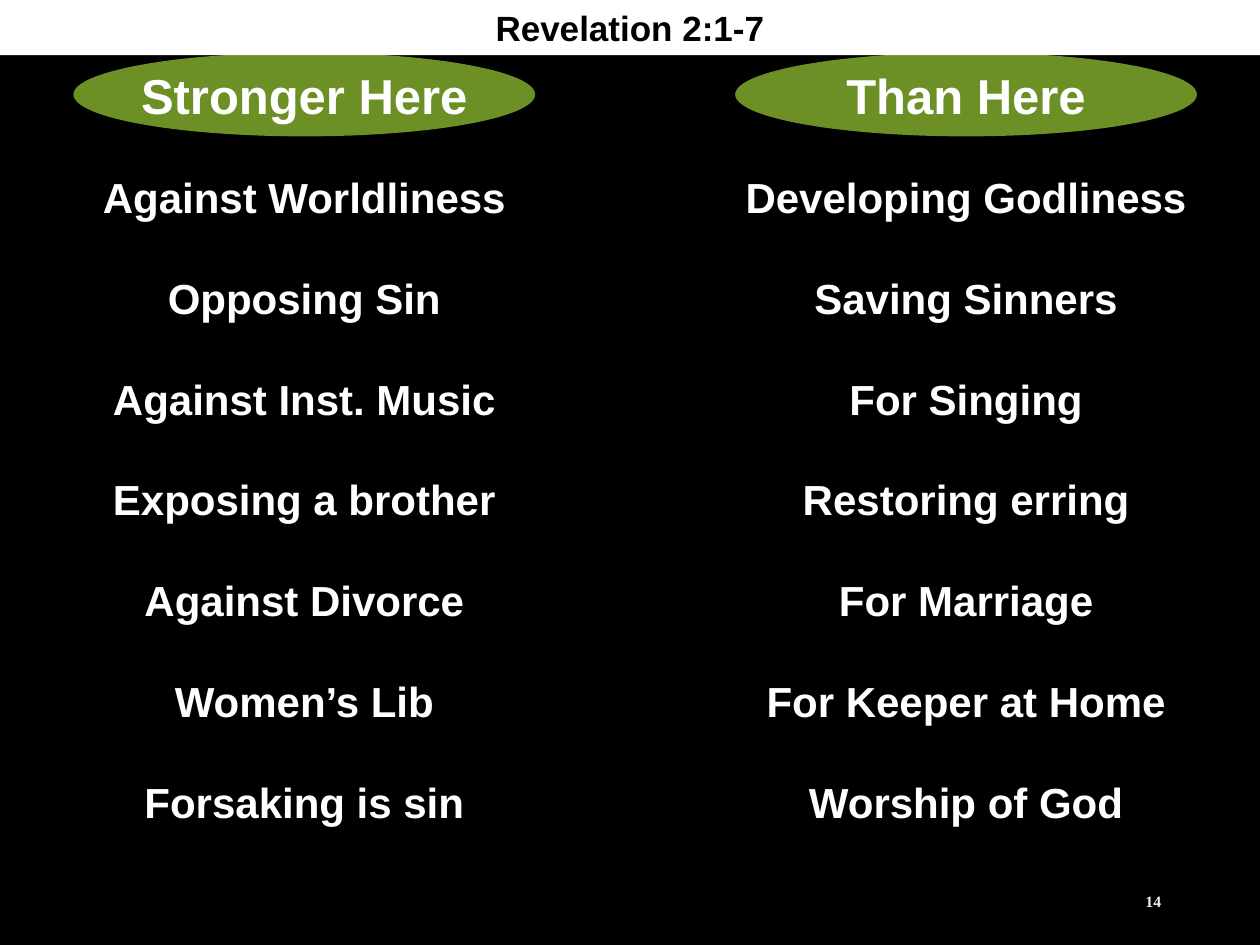
"""Build the slide that sets two lists side by side."""
import pptx
import pptx.dml.color
import pptx.enum.shapes
import pptx.enum.text
import pptx.oxml
import pptx.oxml.ns
import pptx.util

Cm = pptx.util.Cm
Pt = pptx.util.Pt
ALIGN = pptx.enum.text.PP_ALIGN
HUES = {"black": "000000", "white": "FFFFFF", "green": "6C9026", "pale": "EDEDED"}
WIDTH = 9.31
LISTS = [
    (1.48, "Stronger Here", [
        "Against Worldliness", "Opposing Sin", "Against Inst. Music",
        "Exposing a brother", "Against Divorce", "Women’s Lib",
        "Forsaking is sin"]),
    (14.82, "Than Here", [
        "Developing Godliness", "Saving Sinners", "For Singing",
        "Restoring erring", "For Marriage", "For Keeper at Home",
        "Worship of God"]),
]


def color(name):
    """Return the named colour."""
    return pptx.dml.color.RGBColor.from_string(HUES[name])


def place(shape, left, top, width, height):
    """Move and size a shape in centimetres."""
    shape.left, shape.top = Cm(left), Cm(top)
    shape.width, shape.height = Cm(width), Cm(height)


def paint(shape, name):
    """Fill a shape and hide its outline."""
    shape.fill.solid()
    shape.fill.fore_color.rgb = color(name)
    shape.line.fill.background()


def write(shape, lines, size, hue="white", face="Arial", align=ALIGN.CENTER,
          gap=0, wrap=False):
    """Write each line as a bold paragraph with no bullet."""
    frame = shape.text_frame
    frame.word_wrap = wrap
    frame.auto_size = pptx.enum.text.MSO_AUTO_SIZE.NONE
    frame.vertical_anchor = pptx.enum.text.MSO_ANCHOR.MIDDLE
    for i, line in enumerate(lines):
        para = frame.add_paragraph() if i else frame.paragraphs[0]
        props = para._p.get_or_add_pPr()
        props.set("marL", "0")
        props.set("indent", "0")
        props.append(pptx.oxml.parse_xml(
            "<a:buNone %s/>" % pptx.oxml.ns.nsdecls("a")))
        para.alignment = align
        para.space_before = Pt(gap if i else 0)
        run = para.add_run()
        run.text = line
        font = run.font
        font.name, font.size, font.bold = face, Pt(size), True
        font.color.rgb = color(hue)


def add_list(body, left, items):
    """Fill a body placeholder with one list."""
    place(body, left, 1.91, WIDTH, 16.3)
    paint(body, "black")
    body.text_frame.margin_left = body.text_frame.margin_right = 0
    write(body, items, 24, gap=28.8)


def add_head(slide, left, text):
    """Add the oval heading over a list."""
    oval = slide.shapes.add_shape(
        pptx.enum.shapes.MSO_SHAPE.OVAL, Cm(left), Cm(1.06), Cm(WIDTH), Cm(1.69))
    oval.shadow.inherit = False
    paint(oval, "green")
    write(oval, [text], 28)


def add_title(slide, text):
    """Set the title as a white band on top of the headings."""
    title = slide.shapes.title
    place(title, 0, 0, 25.4, 1.11)
    paint(title, "white")
    write(title, [text], 20, "black", wrap=True)
    title.element.getparent().append(title.element)


def add_number(slide, text):
    """Add the page number at the lower right."""
    box = slide.shapes.add_textbox(Cm(17.94), Cm(17.65), Cm(5.72), Cm(1.02))
    write(box, [text], 9, "pale", "Times New Roman", ALIGN.RIGHT, wrap=True)


def main():
    """Build and save the deck."""
    deck = pptx.Presentation()
    deck.slide_width, deck.slide_height = Cm(25.4), Cm(19.05)
    slide = deck.slides.add_slide(deck.slide_layouts[3])
    slide.background.fill.solid()
    slide.background.fill.fore_color.rgb = color("black")
    for spot, (left, head, items) in enumerate(LISTS, 1):
        add_list(slide.placeholders[spot], left, items)
        add_head(slide, left, head)
    add_title(slide, "Revelation 2:1-7")
    add_number(slide, "14")
    deck.save("out.pptx")


if __name__ == "__main__":
    main()
